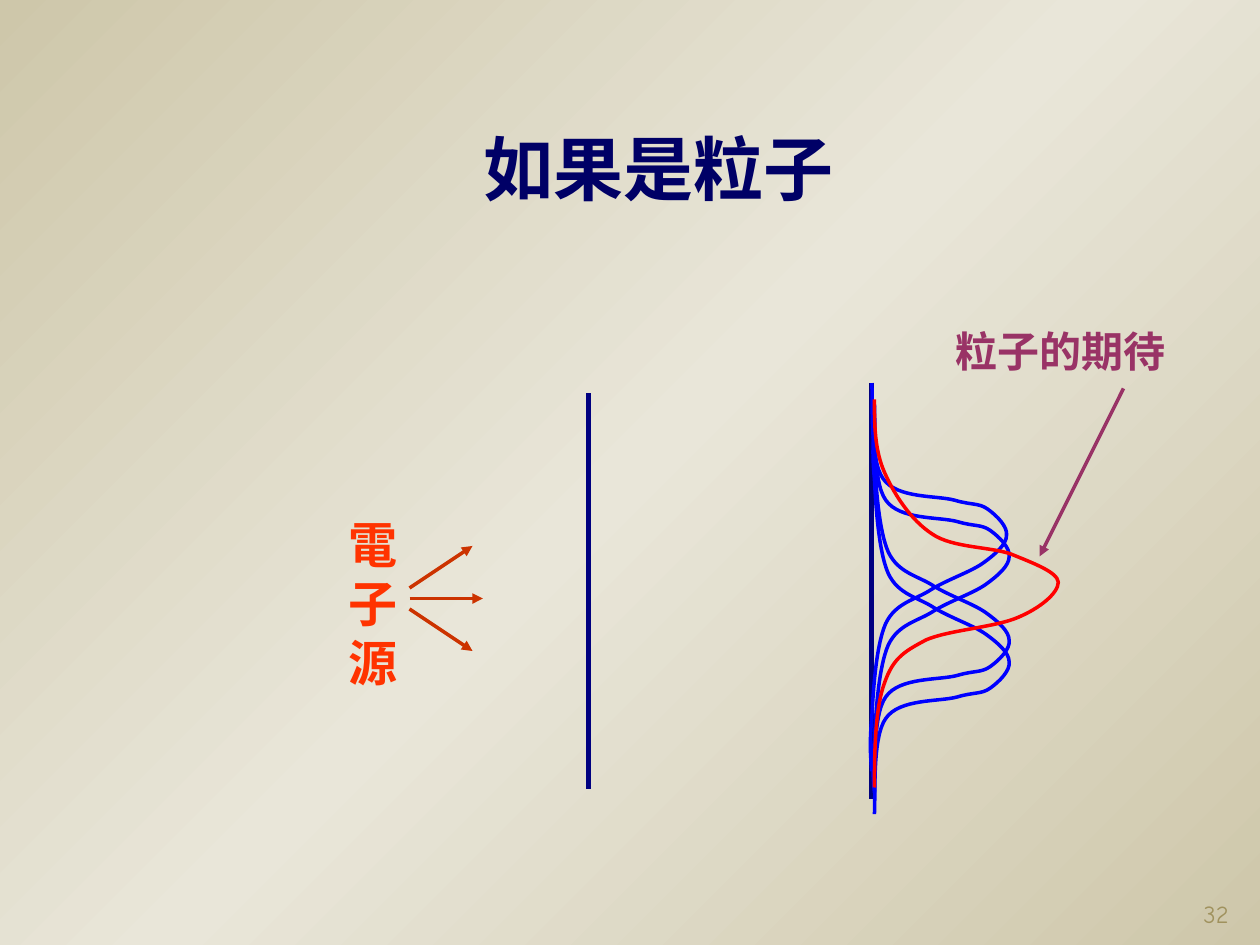
from copy import deepcopy

from pptx import Presentation
from pptx.dml.color import RGBColor
from pptx.enum.shapes import MSO_CONNECTOR
from pptx.enum.text import MSO_ANCHOR, PP_ALIGN
from pptx.oxml.ns import qn
from pptx.util import Pt
from lxml.etree import SubElement

HUES = {
    "edge": "CEC7AA", "glow": "E9E6D9", "page": "A0925E",
    "source": "FF3300", "beam": "CC3300", "wall": "000080",
    "wave": "0000FF", "sum": "FF0000", "note": "993366", "title": "000066",
}
SANS = "Noto Sans CJK SC"
SPAN = 221.8
PEAK = [
    (0, 0), (0.7, 9.4), (-1.4, 43.9), (6.5, 54.7), (14.4, 66.2), (37.4, 64.1),
    (47.5, 67), (56.9, 69.8), (61.2, 68.4), (66.2, 72), (71.3, 75.6),
    (77.8, 82.1), (77, 87.1), (77, 92.2), (70.6, 97.9), (63.4, 103),
    (56.2, 108), (43.2, 112.3), (33.8, 118.1), (25.2, 123.8), (13.7, 125.3),
    (7.9, 137.5), (2.2, 150.5), (0.7, 177.8), (0, 191.5), (-1.4, 205.9),
    (-0.7, 213.8), (0, SPAN),
]
HUMP = [
    (0, 0), (0, 13.7), (0, 28.8), (5.8, 41.8), (11.5, 54.7), (20.9, 69.1),
    (33.1, 77), (44.6, 85), (67, 84.2), (78.5, 88.6), (90.7, 93.6),
    (104.4, 98.6), (105.1, 104.4), (105.1, 110.9), (94.3, 119.5),
    (82.1, 124.6), (69.1, 130.3), (42.5, 131.8), (29.5, 137.5), (17.3, 144),
    (10.8, 147.6), (5.8, 162), (0.7, 175.7), (0, 198.7), (0, SPAN),
]


def hue(name):
    return RGBColor.from_string(HUES[name])


def put(item, form):
    for key, value in form.items():
        setattr(item, key, value)


def paint(slide):
    fill = slide.background.fill
    fill.gradient()
    fill.gradient_angle = 315
    first = fill.gradient_stops
    stops = slide.background._cSld.find(".//" + qn("a:gsLst"))
    stops.append(deepcopy(stops[0]))
    marks = [(0, "edge"), (0.5, "glow"), (1, "edge")]
    for stop, (place, name) in zip(type(first)(stops), marks):
        stop.position = place
        stop.color.rgb = hue(name)


def write(slide, box, text, size, name, face=SANS, frame=None, para=None):
    shape = slide.shapes.add_textbox(*map(Pt, box))
    put(shape.text_frame, {"word_wrap": True, **(frame or {})})
    line = shape.text_frame.paragraphs[0]
    run = line.add_run()
    run.text = text
    put(line, para or {})
    put(run.font, {"size": Pt(size), "name": face, "bold": face == SANS})
    run.font.color.rgb = hue(name)
    if face == SANS:
        line.line_spacing = Pt(1.2 * size)
        SubElement(run.font._element, qn("a:ea"), typeface=face)


def rule(slide, start, end, name, width=2, head=False):
    line = slide.shapes.add_connector(
        MSO_CONNECTOR.STRAIGHT, *map(Pt, (*start, *end)))
    line.line.width = Pt(width)
    line.line.color.rgb = hue(name)
    if head:
        SubElement(line.line._get_or_add_ln(), qn("a:tailEnd"), type="triangle")
    SubElement(line._element.spPr, qn("a:effectLst"))


def draw(slide, knots, name, width):
    dots = [(Pt(x), Pt(y)) for x, y in knots]
    pen = slide.shapes.build_freeform(*dots[0])
    pen.add_line_segments(dots[1:], close=False)
    shape = pen.convert_to_shape()
    shape.shadow.inherit = False
    shape.fill.background()
    shape.line.width = Pt(width)
    shape.line.color.rgb = hue(name)
    return shape


def bend(shape):
    trail = shape._element.find(".//" + qn("a:pathLst"))[0]
    legs = trail.findall(qn("a:lnTo"))
    for i in range(0, len(legs), 3):
        arc = SubElement(trail, qn("a:cubicBezTo"))
        for leg in legs[i:i + 3]:
            arc.append(leg[0])
            trail.remove(leg)


def curve(slide, knots, left, top, name, flip=False):
    bend(draw(slide, [(left + x, top + (SPAN - y if flip else y))
                      for x, y in knots], name, 2))


def walls(slide, drop, solid=None):
    slits = [(224.6, 297.4), (308.2, 358.6), (370.8, 443.5)]
    for part, (top, end) in enumerate(slits):
        if solid and part == solid[0]:
            draw(slide, [(336.2, y) for y in solid[1:]], "wall", 2.75)
        else:
            rule(slide, (336.2, top + drop), (336.2, end + drop), "wall", 2.75)
    rule(slide, (498.2, 218.9 + drop), (498.2, 449.3 + drop), "wall", 2.75)


def main():
    deck = Presentation()
    put(deck, {"slide_width": Pt(720), "slide_height": Pt(540)})
    slide = deck.slides.add_slide(deck.slide_layouts[6])
    paint(slide)
    write(slide, (559.4, 498.2, 149.8, 36), "32", 14, "page", "Comic Neue",
          {"vertical_anchor": MSO_ANCHOR.BOTTOM}, {"alignment": PP_ALIGN.RIGHT})
    flat = {"margin_top": 0, "margin_bottom": 0}
    write(slide, (191.9, 294.2, 48.2, 100.8), "電子源", 28, "source", frame=flat)
    for start, end in [((234, 336), (270, 312)), ((234, 342), (276, 342)),
                       ((234, 348), (270, 372))]:
        rule(slide, start, end, "beam", head=True)
    curve(slide, PEAK, 499.7, 231.1, "wave", True)
    walls(slide, 7.2, (0, 231.8, 334.8))
    walls(slide, 0)
    walls(slide, 2.9, (2, 337, 446.4))
    for left, top, flip in [(498.2, 218.9, False), (499.7, 243.4, True),
                            (499.7, 231.1, False)]:
        curve(slide, PEAK, left, top, "wave", flip)
    curve(slide, HUMP, 499.7, 228.2, "sum")
    rule(slide, (642, 222), (594, 318), "note", head=True)
    bare = {**flat, "margin_left": 0, "margin_right": 0, "word_wrap": False}
    write(slide, (545.8, 185.8, 120.2, 28.8), "粒子的期待", 24, "note", frame=bare)
    write(slide, (269.3, 71.6, 214.6, 48.2), "如果是粒子", 40, "title",
          frame={**flat, "word_wrap": False})
    deck.save("out.pptx")


if __name__ == "__main__":
    main()
